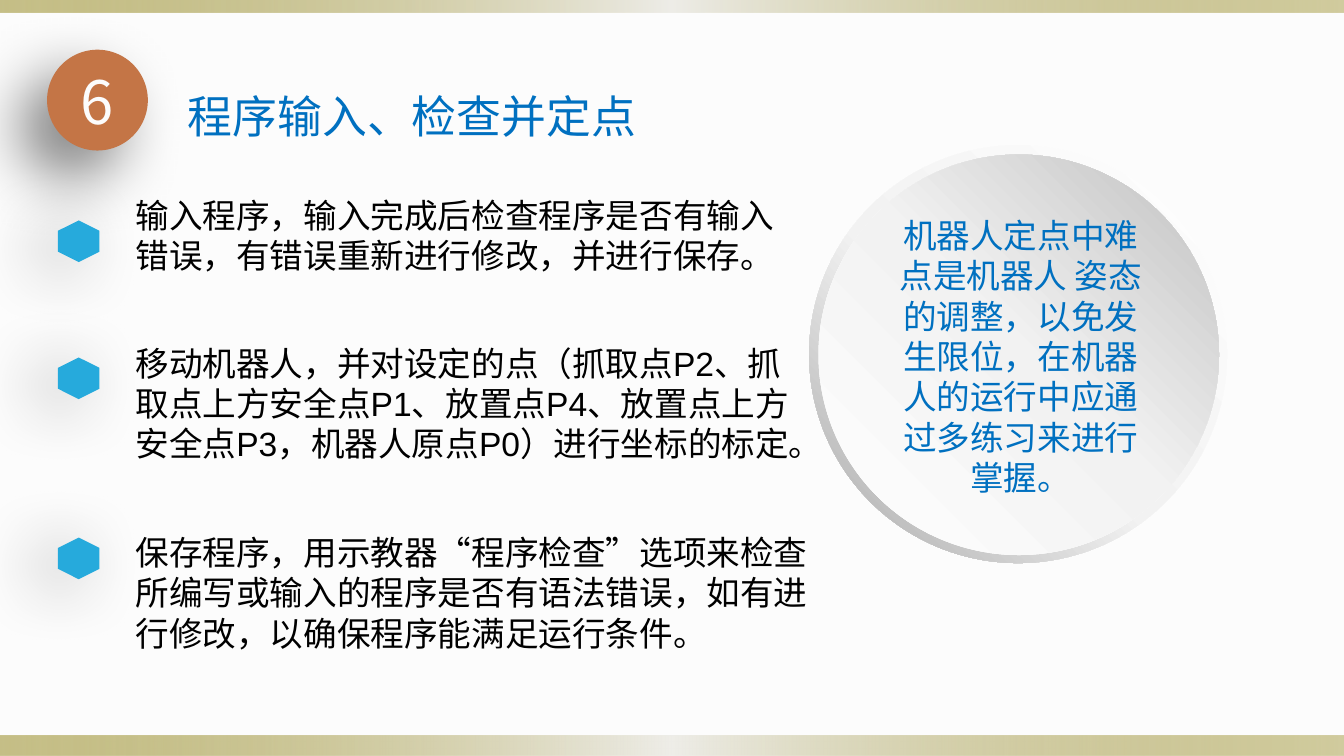
from lxml.etree import SubElement
from pptx import Presentation
from pptx.dml.color import RGBColor
from pptx.enum.shapes import MSO_SHAPE as Shape
from pptx.enum.text import MSO_ANCHOR as Anchor, PP_ALIGN as Align
from pptx.oxml.ns import qn
from pptx.util import Inches, Pt

WIDTH = 10
HEIGHT = WIDTH * 9 / 16
PAPER = RGBColor(0xFC, 0xFC, 0xFC)
WHITE = RGBColor(0xFF, 0xFF, 0xFF)
BLACK = RGBColor(0, 0, 0)
BLUE = RGBColor(0x00, 0x70, 0xC0)
SKY = RGBColor(0x26, 0xAA, 0xDC)
COPPER = RGBColor(0xC4, 0x75, 0x46)
OLIVE = RGBColor(0x91, 0x84, 0x15)
IVORY = RGBColor(0xEE, 0xED, 0xE8)
PALE = RGBColor(0xF2, 0xF2, 0xF2)
SILVER = RGBColor(0xBF, 0xBF, 0xBF)
STEEL = RGBColor(0xA6, 0xA6, 0xA6)

BAND_STOPS = [(0, OLIVE, 50), (50, IVORY, 100), (100, OLIVE, 40)]
RING_STOPS = [(0, WHITE, 100), (55, PALE, 100), (100, STEEL, 100)]
DISC_STOPS = [(0, WHITE, 100), (51, PALE, 100), (100, SILVER, 100)]

TEXT_LEFT = 0.91
BULLET_LEFT, BULLET_SIZE = 0.43, 0.31
STEPS = [
    (1.4, 5.04, 0.71, 1.64,
     "输入程序，输入完成后检查程序是否有输入错误，有错误重新进行修改，并进行保存。"),
    (2.5, 5.12, 1.01, 2.66,
     "移动机器人，并对设定的点（抓取点P2、抓取点上方安全点P1、放置点P4、"
     "放置点上方安全点P3，机器人原点P0）进行坐标的标定。"),
    (3.91, 5.28, 1.01, 4,
     "保存程序，用示教器“程序检查”选项来检查所编写或输入的程序是否有语法错误，"
     "如有进行修改，以确保程序能满足运行条件。"),
]
NOTE = "机器人定点中难点是机器人 姿态的调整，以免发生限位，在机器人的运行中应通过多练习来进行掌握。"


def add_color(parent, color, opacity):
    tint = SubElement(parent, qn("a:srgbClr"), val=str(color))
    if opacity < 100:
        SubElement(tint, qn("a:alpha"), val=str(opacity * 1000))


def add_figure(page, kind, left, top, width, height, color=None):
    figure = page.shapes.add_shape(
        kind, Inches(left), Inches(top), Inches(width), Inches(height))
    figure.shadow.inherit = False
    figure.line.fill.background()
    if color is not None:
        figure.fill.solid()
        figure.fill.fore_color.rgb = color
    return figure


def paint_gradient(figure, stops, angle):
    figure.fill.gradient()
    gradient = figure.element.spPr.find(qn("a:gradFill"))
    stop_list = gradient.find(qn("a:gsLst"))
    for stop in list(stop_list):
        stop_list.remove(stop)
    for position, color, opacity in stops:
        stop = SubElement(stop_list, qn("a:gs"), pos=str(position * 1000))
        add_color(stop, color, opacity)
    gradient.find(qn("a:lin")).set("ang", str(angle * 60000))


def cast_shadow(figure, opacity, blur, distance, angle):
    effects = figure.element.spPr.find(qn("a:effectLst"))
    shadow = SubElement(
        effects, qn("a:outerShdw"), blurRad=str(Pt(blur)),
        dist=str(Pt(distance)), dir=str(angle * 60000),
        algn="ctr", rotWithShape="0")
    add_color(shadow, BLACK, opacity)


def write_text(box, text, size=18, font="Arial", color=BLACK,
               align=Align.LEFT, anchor=Anchor.TOP):
    frame = box.text_frame
    frame.word_wrap = True
    frame.vertical_anchor = anchor
    para = frame.paragraphs[0]
    para.alignment = align
    span = para.add_run()
    span.text = text
    span.font.size = Pt(size)
    span.font.name = font
    span.font.color.rgb = color


def add_text(page, left, top, width, height, text, **style):
    box = page.shapes.add_textbox(
        Inches(left), Inches(top), Inches(width), Inches(height))
    write_text(box, text, **style)


def add_band(page, top, height):
    band = add_figure(page, Shape.RECTANGLE, 0, top, WIDTH, height)
    paint_gradient(band, BAND_STOPS, 0)


def add_heading(page):
    add_text(page, 1.3, 0.61, 5.2, 0.5, "程序输入、检查并定点",
             size=24, color=BLUE)
    badge = add_figure(page, Shape.OVAL, 0.35, 0.37, 0.75, 0.75, COPPER)
    cast_shadow(badge, 50, 35, 20, 135)
    write_text(badge, "6", size=32, font="Noto Sans CJK SC", color=PAPER,
               align=Align.CENTER, anchor=Anchor.MIDDLE)


def add_step(page, top, width, height, bullet_top, text):
    add_text(page, TEXT_LEFT, top, width, height, text)
    bullet = add_figure(page, Shape.HEXAGON, BULLET_LEFT, bullet_top,
                        BULLET_SIZE, BULLET_SIZE, SKY)
    bullet.rotation = 90
    cast_shadow(bullet, 34, 37, 11, 160)


def add_note(page):
    ring = add_figure(page, Shape.DONUT, 6.02, 1.08, 3.11, 3.11)
    ring.adjustments[0] = 0.05
    paint_gradient(ring, RING_STOPS, 135)
    disc = add_figure(page, Shape.OVAL, 6.09, 1.15, 2.98, 2.98)
    paint_gradient(disc, DISC_STOPS, 315)
    add_text(page, 6.57, 1.55, 2.05, 2.22, NOTE,
             font="Lato", color=BLUE, align=Align.CENTER)


def main():
    deck = Presentation()
    deck.slide_width, deck.slide_height = Inches(WIDTH), Inches(HEIGHT)
    page = deck.slides.add_slide(deck.slide_layouts[6])
    page.background.fill.solid()
    page.background.fill.fore_color.rgb = PAPER
    add_band(page, HEIGHT - 0.15, 0.15)
    add_band(page, 0, 0.09)
    add_heading(page)
    for step in STEPS:
        add_step(page, *step)
    add_note(page)
    deck.save("out.pptx")


if __name__ == "__main__":
    main()
